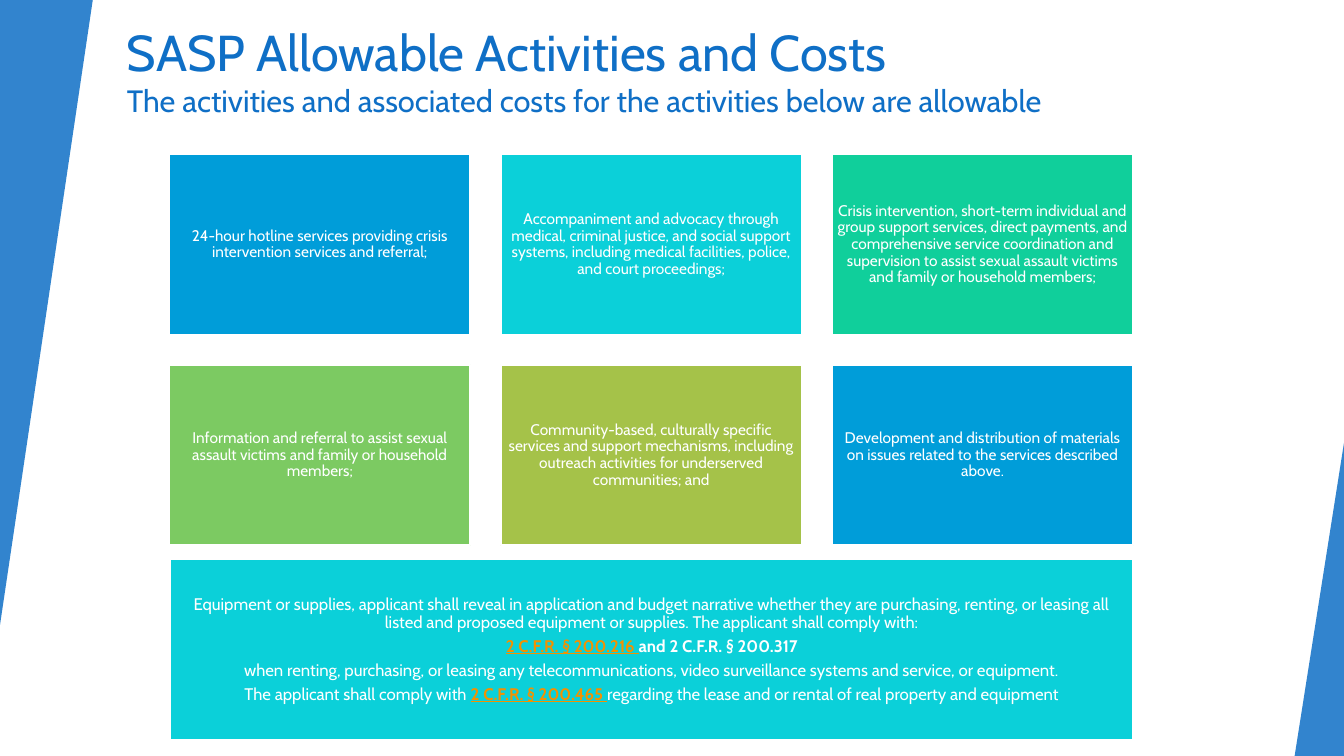
from lxml.etree import SubElement
from pptx import Presentation
from pptx.dml.color import RGBColor
from pptx.enum.shapes import MSO_SHAPE
from pptx.enum.text import MSO_ANCHOR, PP_ALIGN
from pptx.oxml.ns import qn
from pptx.util import Inches, Pt

FONT = "Cabin"
WHITE = RGBColor(0xFF, 0xFF, 0xFF)
TITLE_BLUE = RGBColor(0x0F, 0x6F, 0xC6)
SKY = RGBColor(0x00, 0x9D, 0xD9)
CYAN = RGBColor(0x0B, 0xD0, 0xD9)
TEAL = RGBColor(0x10, 0xCF, 0x9B)
GREEN = RGBColor(0x7C, 0xCA, 0x62)
OLIVE = RGBColor(0xA5, 0xC2, 0x49)
ORANGE = RGBColor(0xF4, 0x91, 0x00)

TITLE = "SASP Allowable Activities and Costs"
SUBTITLE = "The activities and associated costs for the activities below are allowable"
ACTIVITIES = [
    (SKY, "24-hour hotline services providing crisis intervention services and referral;"),
    (CYAN, "Accompaniment and advocacy through medical, criminal justice, and social support "
           "systems, including medical facilities, police, and court proceedings;"),
    (TEAL, "Crisis intervention, short-term individual and group support services, direct "
           "payments, and comprehensive service coordination and supervision to assist sexual "
           "assault victims and family or household members;"),
    (GREEN, "Information and referral to assist sexual assault victims and family or household "
            "members;"),
    (OLIVE, "Community-based, culturally specific services and support mechanisms, including "
            "outreach activities for underserved communities; and"),
    (SKY, "Development and distribution of materials on issues related to the services "
          "described above."),
]
PLAIN, BOLD, CITATION = "plain", "bold", "citation"
EQUIPMENT_NOTE = [
    [("Equipment or supplies, applicant shall reveal in application and budget narrative "
      "whether they are purchasing, renting, or leasing all listed and proposed equipment or "
      "supplies. The applicant shall comply with:", PLAIN)],
    [("2 C.F.R. § 200.216 ", CITATION), ("and 2 C.F.R. § 200.317", BOLD)],
    [("when renting, purchasing, or leasing any telecommunications, video surveillance systems "
      "and service, or equipment.", PLAIN)],
    [("The applicant shall comply with ", PLAIN), ("2 C.F.R. § 200.465 ", CITATION),
     ("regarding the lease and or rental of real property and equipment", PLAIN)],
]


def format_run(run, size, color, style=PLAIN):
    """Apply the slide font, with weight and underline set by the style."""
    font = run.font
    font.name, font.size = FONT, Pt(size)
    font.color.rgb = ORANGE if style == CITATION else color
    font.bold = style != PLAIN
    font.underline = style == CITATION


def add_edge_triangle(slide, left, top, width, height, rotation=0):
    """Place a translucent right triangle along a slide edge."""
    triangle = slide.shapes.add_shape(MSO_SHAPE.ISOSCELES_TRIANGLE, Inches(left), Inches(top),
                                      Inches(width), Inches(height))
    triangle.adjustments[0] = 1
    triangle.rotation = rotation
    triangle.shadow.inherit = False
    triangle.fill.solid()
    triangle.fill.fore_color.rgb = TITLE_BLUE
    triangle.line.fill.background()
    color = triangle.fill._xPr.find(qn("a:solidFill"))[0]
    SubElement(color, qn("a:alpha")).set("val", "85000")


def add_title(slide, left, top, width, height):
    """Place the title with its smaller second line."""
    box = slide.shapes.add_textbox(Inches(left), Inches(top), Inches(width), Inches(height))
    box.text_frame.word_wrap = True
    paragraph = box.text_frame.paragraphs[0]
    paragraph.text = f"{TITLE}\v{SUBTITLE}"
    for run, size in zip(paragraph.runs, (36, 22)):
        format_run(run, size, TITLE_BLUE)


def add_card(slide, left, top, width, height, fill, paragraphs, size):
    """Place a filled rectangle with centred paragraphs of styled runs."""
    card = slide.shapes.add_shape(MSO_SHAPE.RECTANGLE, Inches(left), Inches(top),
                                  Inches(width), Inches(height))
    card.shadow.inherit = False
    card.fill.solid()
    card.fill.fore_color.rgb = fill
    card.line.color.rgb = WHITE
    card.line.width = Pt(1.5)
    frame = card.text_frame
    frame.word_wrap = True
    frame.vertical_anchor = MSO_ANCHOR.MIDDLE
    frame.margin_left = frame.margin_right = Inches(0.05)
    frame.margin_top = frame.margin_bottom = Inches(0.05)
    for index, pieces in enumerate(paragraphs):
        paragraph = frame.add_paragraph() if index else frame.paragraphs[0]
        paragraph.alignment = PP_ALIGN.CENTER
        paragraph.line_spacing = 0.9
        paragraph.space_after = Pt(0.35 * size)
        for text, style in pieces:
            run = paragraph.add_run()
            run.text = text
            format_run(run, size, WHITE, style)


def add_activity_grid(slide, left, top, width, height):
    """Place the activity cards in three columns and two rows."""
    columns, rows, gap = 3, 2, 0.3
    card_width = (width - gap * (columns - 1)) / columns
    card_height = (height - gap * (rows - 1)) / rows
    for index, (fill, text) in enumerate(ACTIVITIES):
        row, column = divmod(index, columns)
        add_card(slide, left + column * (card_width + gap), top + row * (card_height + gap),
                 card_width, card_height, fill, [[(text, PLAIN)]], 11)


def main():
    """Build the slide and save it."""
    presentation = Presentation()
    presentation.slide_width, presentation.slide_height = Inches(13.33), Inches(7.5)
    slide = presentation.slides.add_slide(presentation.slide_layouts[6])
    add_title(slide, 1.16, 0.16, 11.15, 1.2)
    add_edge_triangle(slide, 0, 0, 0.92, 6.2, 180)
    add_edge_triangle(slide, 12.84, 4.39, 0.49, 3.11)
    add_activity_grid(slide, 1.68, 1.53, 9.56, 3.88)
    add_card(slide, 1.69, 5.55, 9.55, 1.79, CYAN, EQUIPMENT_NOTE, 12)
    presentation.save("out.pptx")


if __name__ == "__main__":
    main()
